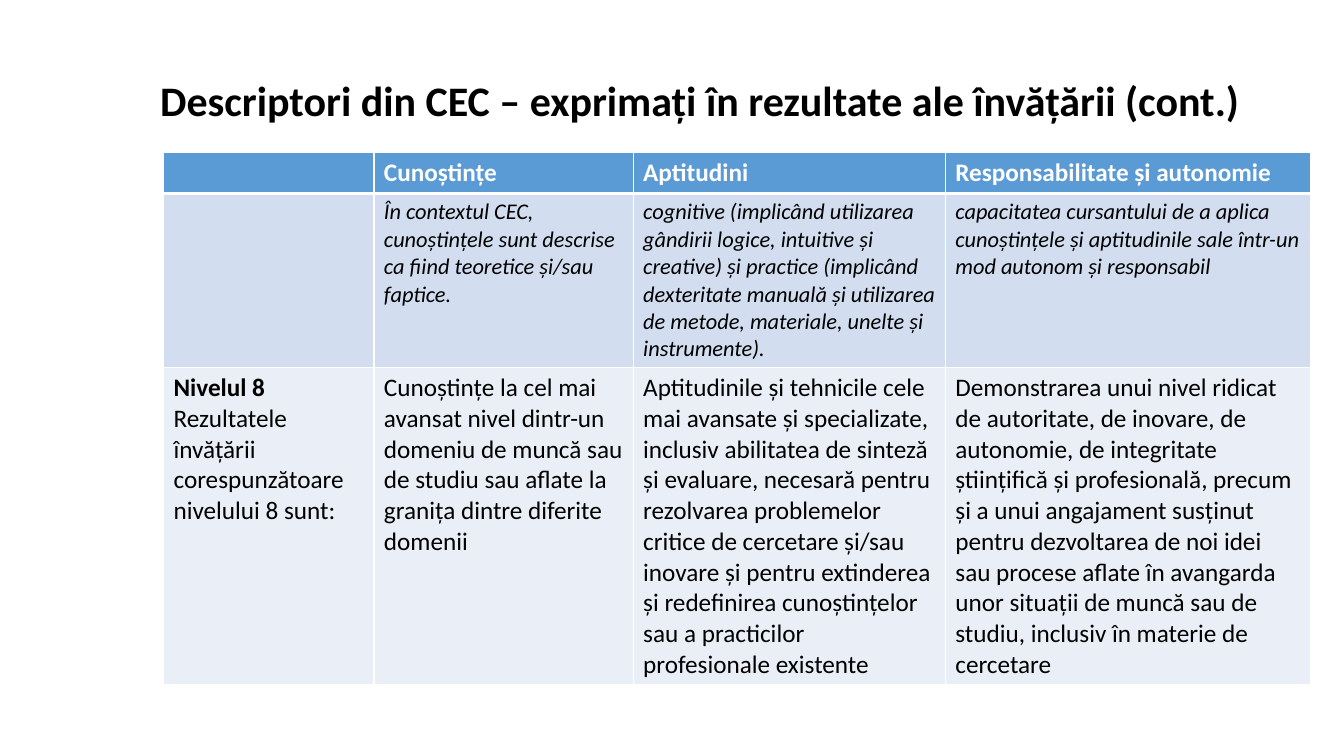
from lxml import etree
from pptx import Presentation
from pptx.dml.color import RGBColor
from pptx.enum import text
from pptx.oxml import ns
from pptx.util import Pt

TITLE = "Descriptori din CEC – exprimați în rezultate ale învățării (cont.)"
# Each cell is a list of (words, bold) runs
ROWS = [
    [[], [("Cunoștințe", True)], [("Aptitudini", True)],
     [("Responsabilitate și autonomie", True)]],
    [[],
     [("În contextul CEC, cunoștințele sunt descrise ca fiind teoretice "
       "și/sau faptice.", False)],
     [("cognitive (implicând utilizarea gândirii logice, intuitive și "
       "creative) și practice (implicând dexteritate manuală și utilizarea "
       "de metode, materiale, unelte și instrumente).", False)],
     [("capacitatea cursantului de a aplica cunoștințele și aptitudinile "
       "sale într-un mod autonom și responsabil", False)]],
    [[("Nivelul 8 ", True),
      ("Rezultatele învățării corespunzătoare nivelului 8 sunt:", False)],
     [("Cunoștințe la cel mai avansat nivel dintr-un domeniu de muncă sau "
       "de studiu sau aflate la granița dintre diferite domenii", False)],
     [("Aptitudinile și tehnicile cele mai avansate și specializate, "
       "inclusiv abilitatea de sinteză și evaluare, necesară pentru "
       "rezolvarea problemelor critice de cercetare și/sau inovare și "
       "pentru extinderea și redefinirea cunoștințelor sau a practicilor "
       "profesionale existente", False)],
     [("Demonstrarea unui nivel ridicat de autoritate, de inovare, de "
       "autonomie, de integritate științifică și profesională, precum și a "
       "unui angajament susținut pentru dezvoltarea de noi idei sau procese "
       "aflate în avangarda unor situații de muncă sau de studiu, inclusiv "
       "în materie de cercetare", False)]],
]
WIDTHS = [150.3, 185.2, 223, 260.8]
# Per row: height, fill, text format
STYLES = [
    (29.2, "5B9BD5", dict(size=18, color="FFFFFF")),
    (124.4, "D2DEEF", dict(size=16, italic=True)),
    (226.6, "EAEFF7", dict(size=18)),
]
LEFT, TOP = 116.8, 109


def rgb(code):
    return RGBColor.from_string(code)


def write(para, words, size=18, color="000000", bold=False, italic=False):
    run = para.add_run()
    run.text = words
    font = run.font
    font.name, font.size = "Calibri", Pt(size)
    font.bold, font.italic = bold, italic
    font.color.rgb = rgb(color)


def edge(cell, side, width):
    """Draw one white border; call before the cell gets its fill."""
    line = etree.SubElement(cell._tc.get_or_add_tcPr(), ns.qn("a:ln" + side),
                            w=str(Pt(width)))
    fill = etree.SubElement(line, ns.qn("a:solidFill"))
    etree.SubElement(fill, ns.qn("a:srgbClr"), val="FFFFFF")


def add_title(slide):
    box = slide.shapes.add_textbox(Pt(107.3), Pt(36.7), Pt(835.2), Pt(74.2))
    frame = box.text_frame
    frame.word_wrap = True
    frame.vertical_anchor = text.MSO_ANCHOR.MIDDLE
    para = frame.paragraphs[0]
    para.line_spacing = 0.9
    write(para, TITLE, size=30, bold=True)


def add_grid(slide):
    high = sum(style[0] for style in STYLES)
    grid = slide.shapes.add_table(len(ROWS), len(WIDTHS), Pt(LEFT), Pt(TOP),
                                  Pt(sum(WIDTHS)), Pt(high)).table
    for col, width in zip(grid.columns, WIDTHS):
        col.width = Pt(width)
    for r, (row, (height, fill, form)) in enumerate(zip(ROWS, STYLES)):
        grid.rows[r].height = Pt(height)
        for c, runs in enumerate(row):
            cell = grid.cell(r, c)
            for side in "LRTB":
                thick = (r, side) in ((0, "B"), (1, "T"))
                edge(cell, side, 3 if thick else 1)
            cell.fill.solid()
            cell.fill.fore_color.rgb = rgb(fill)
            for words, bold in runs:
                write(cell.text_frame.paragraphs[0], words, bold=bold, **form)


def main():
    deck = Presentation()
    deck.slide_width, deck.slide_height = Pt(960), Pt(540)
    slide = deck.slides.add_slide(deck.slide_layouts[6])
    add_title(slide)
    add_grid(slide)
    deck.save("out.pptx")


if __name__ == "__main__":
    main()
